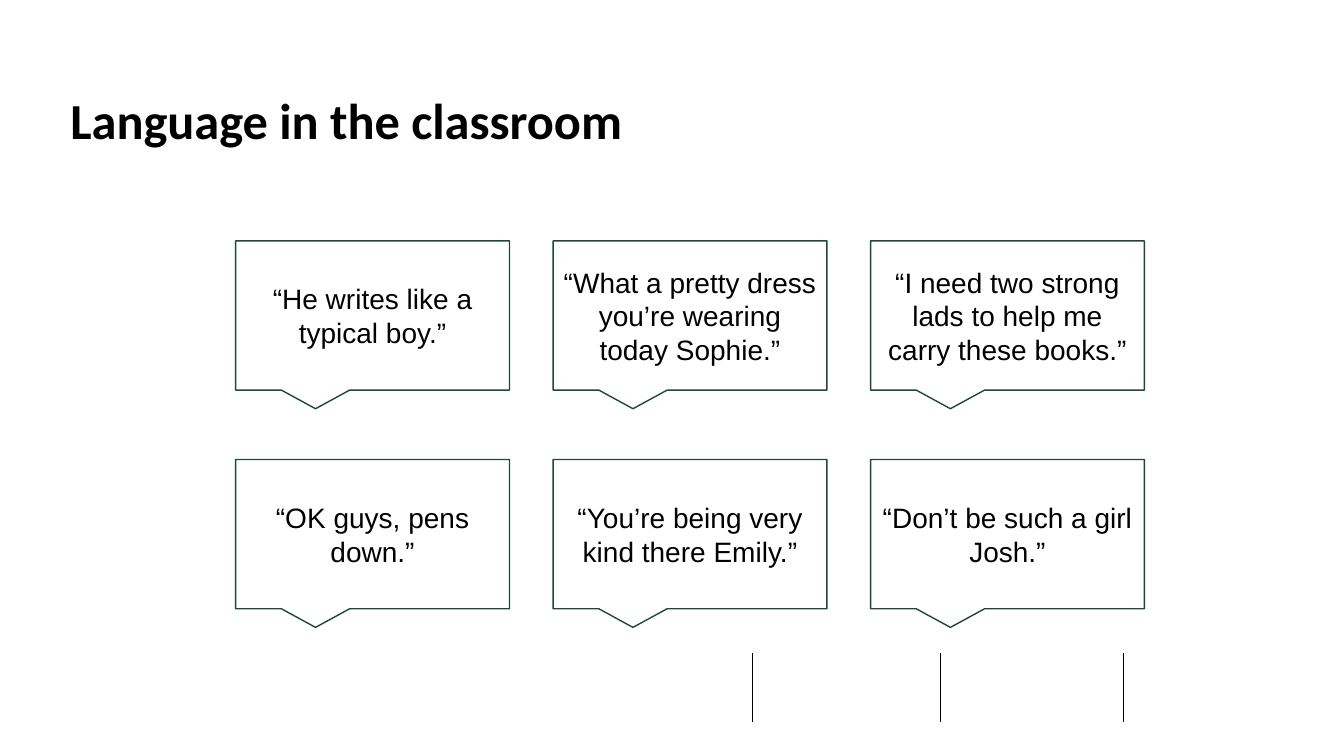
from lxml import etree
from pptx import Presentation
from pptx.dml.color import RGBColor
from pptx.enum.shapes import MSO_CONNECTOR as Connector, MSO_SHAPE as Shape
from pptx.enum.text import MSO_ANCHOR as Anchor, PP_ALIGN as Align
from pptx.oxml.ns import qn
from pptx.util import Cm, Pt

COLOURS = {"text": "000000", "outline": "1E483B", "divider": "000000"}

QUOTES = [
    ["“He writes like a typical boy.”",
     "“What a pretty dress you’re wearing today Sophie.”",
     "“I need two strong lads to help me carry these books.”"],
    ["“OK guys, pens down.”",
     "“You’re being very kind there Emily.”",
     "“Don’t be such a girl Josh.”"],
]
QUOTE_LEFT, QUOTE_TOP = 5.94, 6.07
QUOTE_WIDTH, QUOTE_HEIGHT = 6.9, 3.76
COLUMN_STEP, ROW_STEP = 8, 5.51

DIVIDER_POSITIONS = [18.95, 23.7, 28.32]
DIVIDER_TOP, DIVIDER_BOTTOM = 16.46, 18.19


class SlideBuilder:
    """Holds the colours and the current slide; all lengths are in centimetres."""

    def __init__(self, slide, colours):
        self.slide = slide
        self.colours = {name: RGBColor.from_string(value) for name, value in colours.items()}

    def set_text(self, box, text, font_name, size, align, bold=False):
        frame = box.text_frame
        frame.text = text
        frame.word_wrap = True
        frame.vertical_anchor = Anchor.MIDDLE
        para = frame.paragraphs[0]
        para.alignment = align
        font = para.runs[0].font
        font.name, font.size, font.bold = font_name, Pt(size), bold
        font.color.rgb = self.colours["text"]
        return para

    def title(self, text, left, top, width, height):
        box = self.slide.shapes.title
        box.left, box.top, box.width, box.height = Cm(left), Cm(top), Cm(width), Cm(height)
        para = self.set_text(box, text, "Calibri", 36, Align.LEFT, bold=True)
        para.line_spacing = 0.9

    def speech_bubble(self, text, left, top, width, height):
        bubble = self.slide.shapes.add_shape(
            Shape.RECTANGULAR_CALLOUT, Cm(left), Cm(top), Cm(width), Cm(height))
        bubble.shadow.inherit = False
        bubble.fill.background()
        bubble.line.color.rgb = self.colours["outline"]
        bubble.line.width = Pt(1)
        self.set_text(bubble, text, "Arial", 20, Align.CENTER)

    def divider(self, x, top, bottom):
        line = self.slide.shapes.add_connector(
            Connector.STRAIGHT, Cm(x), Cm(top), Cm(x), Cm(bottom))
        line.line.color.rgb = self.colours["divider"]
        line.line.width = Pt(0.5)
        etree.SubElement(line._element.spPr, qn("a:effectLst"))


def main():
    deck = Presentation()
    deck.slide_width, deck.slide_height = Cm(33.87), Cm(19.05)
    title_only = deck.slide_layouts[5]
    builder = SlideBuilder(deck.slides.add_slide(title_only), COLOURS)

    for x in DIVIDER_POSITIONS:
        builder.divider(x, DIVIDER_TOP, DIVIDER_BOTTOM)
    builder.title("Language in the classroom", 1.52, 1.52, 18.82, 3.18)
    for row, quotes in enumerate(QUOTES):
        for column, quote in enumerate(quotes):
            builder.speech_bubble(
                quote, QUOTE_LEFT + column * COLUMN_STEP, QUOTE_TOP + row * ROW_STEP,
                QUOTE_WIDTH, QUOTE_HEIGHT)

    deck.save("out.pptx")


if __name__ == "__main__":
    main()
